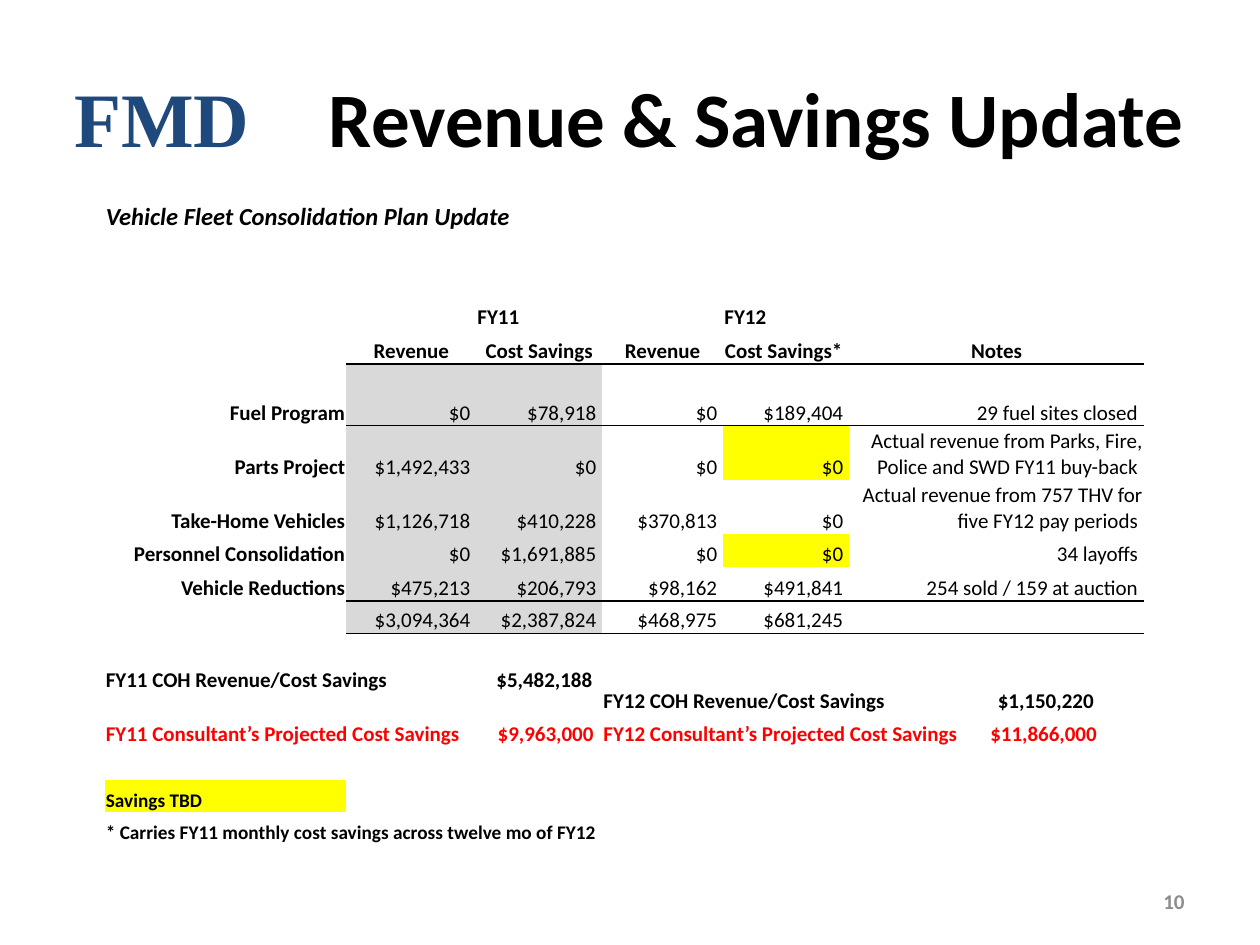
"""Build the revenue and savings update slide with its vehicle fleet table."""
from lxml import etree
from pptx import Presentation
from pptx.dml.color import RGBColor
from pptx.enum.text import MSO_ANCHOR as ANCHOR, PP_ALIGN as ALIGN
from pptx.oxml import parse_xml
from pptx.oxml.ns import nsdecls, qn
from pptx.util import Inches, Pt


def style(r, size, color="000000", bold=True, italic=False, name="Calibri"):
    f = r.font
    f.size, f.bold, f.italic, f.name = Pt(size), bold, italic, name
    f.color.rgb = RGBColor.from_string(color)


def add_tab(p, pos):
    tabs = etree.SubElement(p._p.get_or_add_pPr(), qn("a:tabLst"))
    etree.SubElement(tabs, qn("a:tab"), pos=str(Inches(pos)), algn="l")


prs = Presentation()
prs.slide_width, prs.slide_height = Inches(10), Inches(7.5)
s = prs.slides.add_slide(prs.slide_layouts[5])

sp = s.shapes.title
sp.left, sp.top, sp.width, sp.height = [Inches(v) for v in (0.33, 0.3, 9.17, 1.25)]
tf = sp.text_frame
tf.word_wrap = True
tf.vertical_anchor = ANCHOR.MIDDLE
tf.margin_left, tf.margin_right = Inches(0.26), Inches(0.02)
p = tf.paragraphs[0]
p.alignment = ALIGN.LEFT
add_tab(p, 2.02)
for text, color, name in [("FMD", "1F497D", "Times New Roman"),
                          ("\tRevenue & Savings Update", "000000", "Calibri")]:
    r = p.add_run()
    r.text = text
    style(r, 44, color, name=name)

widths = [1.92, 1.03, 1, 0.96, 1, 2.34]
heights = [0.26] * 4 + [0.27, 0.49, 0.43, 0.43, 0.26, 0.27, 0.26, 0.26, 0.38] + [0.26] * 4
header_row, first_row, last_row, total_row = 4, 5, 9, 10
rows = {
    0: ["Vehicle Fleet Consolidation Plan Update"],
    3: ["", "", "FY11", "", "FY12"],
    4: ["", "Revenue", "Cost Savings", "Revenue", "Cost Savings* ", "Notes"],
    5: ["Fuel Program", "$0 ", "$78,918 ", "$0 ", "$189,404 ", "29 fuel sites closed "],
    6: ["Parts Project", "$1,492,433 ", "$0 ", "$0 ", "$0 ",
        "Actual revenue from Parks, Fire, Police and SWD FY11 buy-back "],
    7: ["Take-Home Vehicles", "$1,126,718 ", "$410,228 ", "$370,813 ", "$0 ",
        "Actual revenue from 757 THV for five FY12 pay periods "],
    8: ["Personnel Consolidation", "$0 ", "$1,691,885 ", "$0 ", "$0 ", "34 layoffs "],
    9: ["Vehicle Reductions", "$475,213 ", "$206,793 ", "$98,162 ", "$491,841 ",
        "254 sold / 159 at auction "],
    10: ["", "$3,094,364 ", "$2,387,824 ", "$468,975 ", "$681,245 "],
    12: ["FY11 COH Revenue/Cost Savings\t$5,482,188", "", "",
         "FY12 COH Revenue/Cost Savings\t$1,150,220"],
    13: ["FY11 Consultant’s Projected Cost Savings\t$9,963,000", "", "",
         "FY12 Consultant’s Projected Cost Savings\t$11,866,000"],
    15: ["Savings TBD"],
    16: ["* Carries FY11 monthly cost savings across twelve mo of FY12"],
}
merges = [(0, 0), (12, 0), (12, 3), (13, 0), (13, 3), (16, 0)]
tab_stops = {(12, 0): 3.1, (12, 3): 3.13, (13, 0): 3.11, (13, 3): 3.07}
to_be_decided = [(6, 4), (8, 4), (15, 0)]

gf = s.shapes.add_table(len(heights), len(widths), Inches(0.83), Inches(1.58),
                        Inches(sum(widths)), Inches(sum(heights)))
tbl = gf.table
tbl.first_row = tbl.horz_banding = False
tbl._tbl.tblPr.find(qn("a:tableStyleId")).text = "{2D5ABB26-0587-4C30-8999-92F81FD0307C}"
for col, w in zip(tbl.columns, widths):
    col.width = Inches(w)
for row, h in zip(tbl.rows, heights):
    row.height = Inches(h)
for i, j in merges:
    tbl.cell(i, j).merge(tbl.cell(i, j + 2))

for i in range(len(heights)):
    texts = rows.get(i, [])
    for j in range(len(widths)):
        cell = tbl.cell(i, j)
        cell.margin_left = cell.margin_right = cell.margin_top = Inches(0.01)
        cell.margin_bottom = 0
        cell.vertical_anchor = ANCHOR.TOP if (i, j) == (12, 0) else ANCHOR.BOTTOM

        edge = {header_row: "lnB", last_row: "lnB", first_row: "lnT", total_row: "lnT"}.get(i)
        if edge and j > 0:
            cell._tc.get_or_add_tcPr().append(parse_xml(
                f'<a:{edge} {nsdecls("a")} w="{Pt(1)}"><a:solidFill><a:srgbClr val="000000"/>'
                f'</a:solidFill></a:{edge}>'))
        if (i, j) in to_be_decided:
            cell.fill.solid()
            cell.fill.fore_color.rgb = RGBColor.from_string("FFFF00")
        elif first_row <= i <= total_row and j in (1, 2):
            cell.fill.solid()
            cell.fill.fore_color.rgb = RGBColor.from_string("D9D9D9")
        else:
            cell.fill.background()

        p = cell.text_frame.paragraphs[0]
        if j >= len(texts) or not texts[j]:
            etree.SubElement(p._p, qn("a:endParaRPr"), sz="1100")
            continue
        p.text = texts[j]
        if i == header_row:
            p.alignment = ALIGN.CENTER
        elif first_row <= i <= total_row:
            p.alignment = ALIGN.RIGHT
        if (i, j) in tab_stops:
            add_tab(p, tab_stops[i, j])
        size = 14 if i == 0 else 11 if i >= 15 else 12
        style(p.runs[0], size, "FF0000" if i == 13 else "000000",
              bold=j == 0 or not first_row <= i <= total_row, italic=i == 0)

sp = s.shapes.add_textbox(Inches(7.17), Inches(6.95), Inches(2.33), Inches(0.4))
tf = sp.text_frame
tf.word_wrap = True
tf.vertical_anchor = ANCHOR.MIDDLE
p = tf.paragraphs[0]
p.text = "10"
p.alignment = ALIGN.RIGHT
style(p.runs[0], 12, "8C8C8C")

prs.save("out.pptx")
